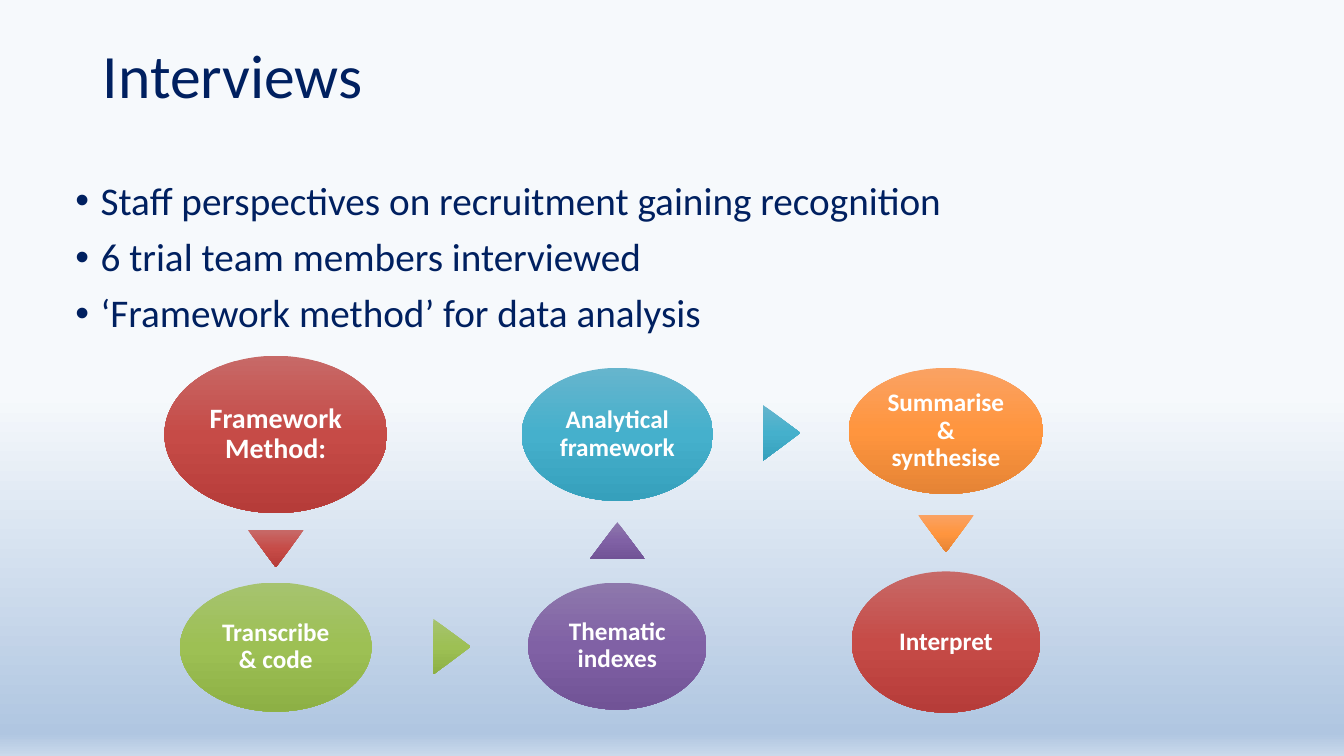
from dataclasses import dataclass

from lxml.etree import SubElement
from pptx import Presentation
from pptx.dml.color import RGBColor
from pptx.dml.fill import FillFormat
from pptx.enum.shapes import MSO_SHAPE
from pptx.enum.text import MSO_ANCHOR, PP_ALIGN
from pptx.oxml.ns import qn
from pptx.slide import Slide
from pptx.text.text import TextFrame
from pptx.util import Pt

COLORS = {"navy": "002060", "white": "FFFFFF"}
BACKGROUND = {52: "F6F9FC", 97: "B0C6E1", 100: "CAD9EB"}
GRADIENTS = {
    "red": {0: "C76967", 50: "C64B47", 100: "B63C39"},
    "green": {0: "A6C36F", 50: "9DC054", 100: "8DB045"},
    "purple": {0: "8E78AC", 50: "8061A5", 100: "715396"},
    "teal": {0: "66B5CD", 50: "45B0CC", 100: "36A0BC"},
    "orange": {0: "FAA263", 50: "FF953E", 100: "E58435"},
}
FONT = "Calibri"
COLUMNS = (197, 441, 675.7)  # centres of the three columns of steps
ARROW_SIZE = (39.6, 26.6)
UP, RIGHT, DOWN = 0, 90, 180


@dataclass
class Step:
    text: str
    gradient: str
    column: int
    center_y: float
    width: float
    height: float
    size: float = 18


@dataclass
class Arrow:
    gradient: str
    center_x: float
    center_y: float
    direction: int


STEPS = [
    Step("Framework Method:", "red", 0, 310.3, 159.1, 112.3, size=20),
    Step("Transcribe & code", "green", 0, 462.2, 136.8, 92.2),
    Step("Thematic indexes", "purple", 1, 461.5, 127.4, 90.7),
    Step("Analytical framework", "teal", 1, 310.3, 136.8, 95),
    Step("Summarise & synthesise", "orange", 2, 307.8, 139, 90),
    Step("Interpret", "red", 2, 458.6, 134.6, 100.8),
]
ARROWS = [
    Arrow("red", COLUMNS[0], 392, DOWN),
    Arrow("green", 322.9, 461.9, RIGHT),
    Arrow("purple", COLUMNS[1], 386.3, UP),
    Arrow("teal", 558.4, 309.2, RIGHT),
    Arrow("orange", COLUMNS[2], 381.2, DOWN),
]
BULLETS = [
    "Staff perspectives on recruitment gaining recognition",
    "6 trial team members interviewed",
    "‘Framework method’ for data analysis",
]


def set_gradient(fill: FillFormat, element, stops: dict[int, str]) -> None:
    """Fill from top to bottom, whatever the rotation of the shape."""
    fill.gradient()
    fill.gradient_angle = 270
    gradient = next(element.iter(qn("a:gradFill")))
    gradient.set("rotWithShape", "0")
    stop_list = gradient.find(qn("a:gsLst"))
    for stop in list(stop_list):
        stop_list.remove(stop)
    for position, color in stops.items():
        stop = SubElement(stop_list, qn("a:gs"), pos=str(position * 1000))
        SubElement(stop, qn("a:srgbClr"), val=color)


def write_text(frame: TextFrame, text: str, *, size: float, color: str = "navy",
               bold: bool = False, align: PP_ALIGN = PP_ALIGN.LEFT,
               anchor: MSO_ANCHOR = MSO_ANCHOR.TOP, inset: float | None = None,
               bullet: bool = False, space_before: float = 0) -> None:
    """Write each line of the text as one paragraph."""
    frame.word_wrap = True
    frame.vertical_anchor = anchor
    if inset is not None:
        frame.margin_left = frame.margin_right = Pt(inset)
        frame.margin_top = frame.margin_bottom = Pt(inset)
    frame.text = text
    for index, paragraph in enumerate(frame.paragraphs):
        paragraph.alignment = align
        paragraph.line_spacing = 0.9
        paragraph.space_before = Pt(space_before if index else 0)
        if bullet:
            properties = paragraph._p.get_or_add_pPr()
            properties.set("marL", str(Pt(18)))
            properties.set("indent", str(-Pt(18)))
            SubElement(properties, qn("a:buFont"), typeface="Arial")
            SubElement(properties, qn("a:buChar"), char="•")
        for run in paragraph.runs:
            run.font.name = FONT
            run.font.size = Pt(size)
            run.font.bold = bold
            run.font.color.rgb = RGBColor.from_string(COLORS[color])


def add_gradient_shape(slide: Slide, kind: MSO_SHAPE, center_x: float, center_y: float,
                       width: float, height: float, gradient: str):
    shape = slide.shapes.add_shape(kind, Pt(center_x - width / 2), Pt(center_y - height / 2),
                                   Pt(width), Pt(height))
    shape.shadow.inherit = False
    shape.line.fill.background()
    set_gradient(shape.fill, shape.element, GRADIENTS[gradient])
    return shape


def add_step(slide: Slide, step: Step) -> None:
    shape = add_gradient_shape(slide, MSO_SHAPE.OVAL, COLUMNS[step.column], step.center_y,
                               step.width, step.height, step.gradient)
    write_text(shape.text_frame, step.text, size=step.size, color="white", bold=True,
               align=PP_ALIGN.CENTER, anchor=MSO_ANCHOR.MIDDLE, inset=2)


def add_arrow(slide: Slide, arrow: Arrow) -> None:
    shape = add_gradient_shape(slide, MSO_SHAPE.ISOSCELES_TRIANGLE, arrow.center_x,
                               arrow.center_y, *ARROW_SIZE, arrow.gradient)
    shape.rotation = arrow.direction


def main() -> None:
    presentation = Presentation()
    presentation.slide_width, presentation.slide_height = Pt(960), Pt(540)
    slide = presentation.slides.add_slide(presentation.slide_layouts[5])
    set_gradient(slide.background.fill, slide.element, BACKGROUND)

    # Title
    title = slide.shapes.title
    title.left, title.top, title.width, title.height = Pt(66.2), Pt(28.8), Pt(702.7), Pt(104.4)
    write_text(title.text_frame, "Interviews", size=44)

    # Bulleted summary
    summary = slide.shapes.add_textbox(Pt(46.8), Pt(126), Pt(828), Pt(133.9))
    write_text(summary.text_frame, "\n".join(BULLETS), size=28, bullet=True, space_before=10)

    # Steps of the framework method
    for step in STEPS:
        add_step(slide, step)
    for arrow in ARROWS:
        add_arrow(slide, arrow)

    presentation.save("out.pptx")


if __name__ == "__main__":
    main()
